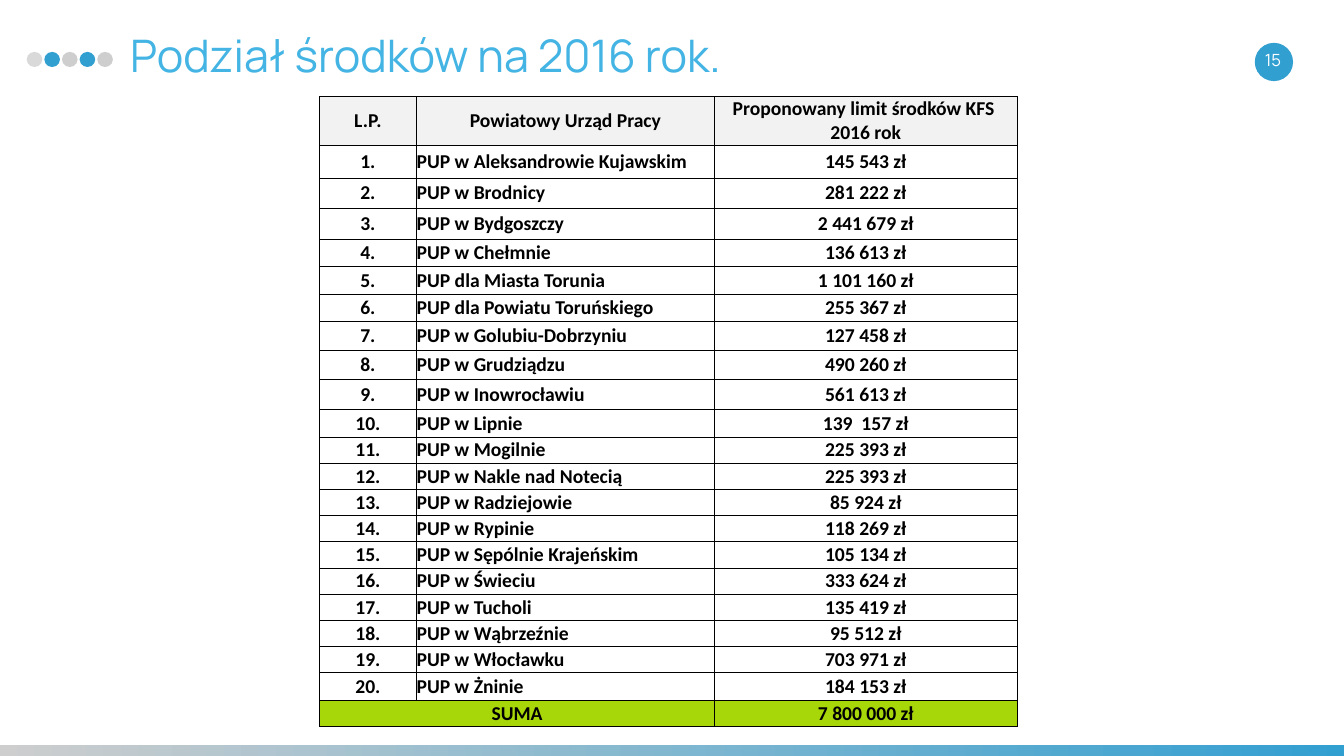
from lxml import etree
from pptx import Presentation
from pptx import util as u
from pptx.dml.color import RGBColor
from pptx.enum import shapes, text
from pptx.oxml import ns

BLACK, WHITE, GREY, BLUE = "000000", "FFFFFF", "CECECE", "329FD1"
HEAD_FILL, SUM_FILL = "F2F2F2", "A8D709"
COLUMNS = [1.92, 5.92, 6]
HEADER = ["L.P.", "Powiatowy Urząd Pracy", "Proponowany limit środków KFS \v2016 rok"]
OFFICES = [
    ("w Aleksandrowie Kujawskim", "145 543"),
    ("w Brodnicy", "281 222"),
    ("w Bydgoszczy", "2 441 679"),
    ("w Chełmnie", "136 613"),
    ("dla Miasta Torunia", "1 101 160"),
    ("dla Powiatu Toruńskiego", "255 367"),
    ("w Golubiu-Dobrzyniu", "127 458"),
    ("w Grudziądzu", "490 260"),
    ("w Inowrocławiu", "561 613"),
    ("w Lipnie", "139  157"),
    ("w Mogilnie", "225 393"),
    ("w Nakle nad Notecią", "225 393"),
    ("w Radziejowie", "85 924"),
    ("w Rypinie", "118 269"),
    ("w Sępólnie Krajeńskim", "105 134"),
    ("w Świeciu", "333 624"),
    ("w Tucholi", "135 419"),
    ("w Wąbrzeźnie", "95 512"),
    ("w Włocławku", "703 971"),
    ("w Żninie", "184 153"),
]


def rgb(value):
    """Return a colour from a hex string."""
    return RGBColor.from_string(value)


def set_attrs(obj, values):
    """Set each attribute in values on obj."""
    for name, value in values.items():
        setattr(obj, name, value)


def write(p, content, color, align, font):
    """Fill a paragraph with formatted text."""
    p.text = content
    p.alignment = align
    for r in p.runs:
        set_attrs(r.font, font)
        r.font.color.rgb = rgb(color)


def place(sp, left, top, width, height):
    """Move and size a shape in inches."""
    box = {"left": left, "top": top, "width": width, "height": height}
    set_attrs(sp, {name: u.Inches(value) for name, value in box.items()})


def add_plain(s, kind, box, color):
    """Add a preset shape without line or shadow."""
    sp = s.shapes.add_shape(kind, *map(u.Inches, box))
    sp.shadow.inherit = False
    sp.line.fill.background()
    sp.fill.solid()
    sp.fill.fore_color.rgb = rgb(color)
    return sp


def add_footer(s):
    """Add the gradient strip along the bottom."""
    sp = add_plain(s, shapes.MSO_SHAPE.RECTANGLE, (0, 14.79, 26.67, 0.38), GREY)
    sp.fill.gradient()
    sp.fill.gradient_angle = 0
    for stop, position, color in zip(sp.fill.gradient_stops, (0, 1), (GREY, BLUE)):
        stop.position = position
        stop.color.rgb = rgb(color)


def add_dots(s):
    """Add the row of dots before the title."""
    for i, color in enumerate(["D9D9D9", BLUE, GREY, BLUE, GREY]):
        add_plain(s, shapes.MSO_SHAPE.OVAL, (0.53 + i * 0.35, 1.03, 0.31, 0.3), color)


def format_text(sp, content, color, size, align, anchor):
    """Write one line of Manrope text in a shape."""
    tf = sp.text_frame
    set_attrs(tf, {
        "word_wrap": True, "auto_size": text.MSO_AUTO_SIZE.NONE, "vertical_anchor": anchor,
        "margin_left": u.Inches(0.27), "margin_right": u.Inches(0.27),
        "margin_top": u.Inches(0.13), "margin_bottom": u.Inches(0.13),
    })
    write(tf.paragraphs[0], content, color, align, {"name": "Manrope", "size": u.Pt(size)})


def add_title(s, content):
    """Move and format the title placeholder."""
    sp = s.shapes.title
    place(sp, 2.31, 0.41, 21.25, 1.6)
    format_text(sp, content, "43B4E3", 64, text.PP_ALIGN.LEFT, text.MSO_ANCHOR.TOP)


def add_page_number(s, number):
    """Add the slide number on its disc."""
    add_plain(s, shapes.MSO_SHAPE.OVAL, (24.9, 0.85, 0.76, 0.76), BLUE)
    sp = s.shapes.add_textbox(*map(u.Inches, (24.68, 0.78, 1.16, 0.8)))
    format_text(sp, number, WHITE, 24, text.PP_ALIGN.CENTER, text.MSO_ANCHOR.MIDDLE)


def set_borders(cell, widths):
    """Draw black cell borders, with widths in points by side."""
    tc_pr = cell._tc.get_or_add_tcPr()
    for side in "LRTB":
        ln = etree.SubElement(tc_pr, ns.qn(f"a:ln{side}"), w=str(u.Pt(widths[side])))
        fill = etree.SubElement(ln, ns.qn("a:solidFill"))
        etree.SubElement(fill, ns.qn("a:srgbClr"), val=BLACK)


def format_cell(cell, content, fill, align, widths):
    """Write and style one table cell."""
    set_borders(cell, widths)
    cell.fill.solid()
    cell.fill.fore_color.rgb = rgb(fill)
    edge = u.Inches(0.01)
    set_attrs(cell, {
        "margin_left": edge, "margin_right": edge, "margin_top": edge, "margin_bottom": 0,
        "vertical_anchor": text.MSO_ANCHOR.MIDDLE,
    })
    font = {"name": "Calibri", "size": u.Pt(28), "bold": True}
    write(cell.text_frame.paragraphs[0], content, BLACK, align, font)


def add_limits(s, top, rows, heights, fills, inner):
    """Add a table of limits; fills maps row numbers to colours."""
    box = (6.34, top, sum(COLUMNS), sum(heights))
    table = s.shapes.add_table(len(rows), len(COLUMNS), *map(u.Inches, box)).table
    set_attrs(table, {"first_row": False, "horz_banding": False})
    for column, width in zip(table.columns, COLUMNS):
        column.width = u.Inches(width)
    for i, (row, height) in enumerate(zip(rows, heights)):
        table.rows[i].height = u.Inches(height)
        for j, content in enumerate(row):
            left_aligned = j == 1 and i not in fills
            align = text.PP_ALIGN.LEFT if left_aligned else text.PP_ALIGN.CENTER
            base = 1 if i in fills else inner
            widths = dict.fromkeys("LRTB", base)
            if j == 0:
                widths["L"] = 1
            if i <= 1:
                widths["T"] = 1
            format_cell(table.cell(i, j), content, fills.get(i, WHITE), align, widths)
    return table


def main():
    """Build the slide and save it."""
    prs = Presentation()
    set_attrs(prs, {"slide_width": u.Inches(26.67), "slide_height": u.Inches(15)})
    s = prs.slides.add_slide(prs.slide_layouts[5])
    add_footer(s)
    add_dots(s)
    add_title(s, "Podział środków na 2016 rok.")
    add_page_number(s, "15")
    rows = [(f"{n}.", f"PUP {office}", f"{limit} zł")
            for n, (office, limit) in enumerate(OFFICES, 1)]
    heights = [0.92, 0.66, 0.58, 0.63] + [0.54] * 3 + [0.58] * 4
    add_limits(s, 1.92, [HEADER] + rows[:10], heights, {0: HEAD_FILL}, 0.5)
    total = ("SUMA", "", "7 800 000 zł")
    heights = [0.52] * 9 + [0.55, 0.52]
    table = add_limits(s, 8.67, rows[10:] + [total], heights, {10: SUM_FILL}, 1)
    table.cell(10, 0).merge(table.cell(10, 1))
    prs.save("out.pptx")


if __name__ == "__main__":
    main()
